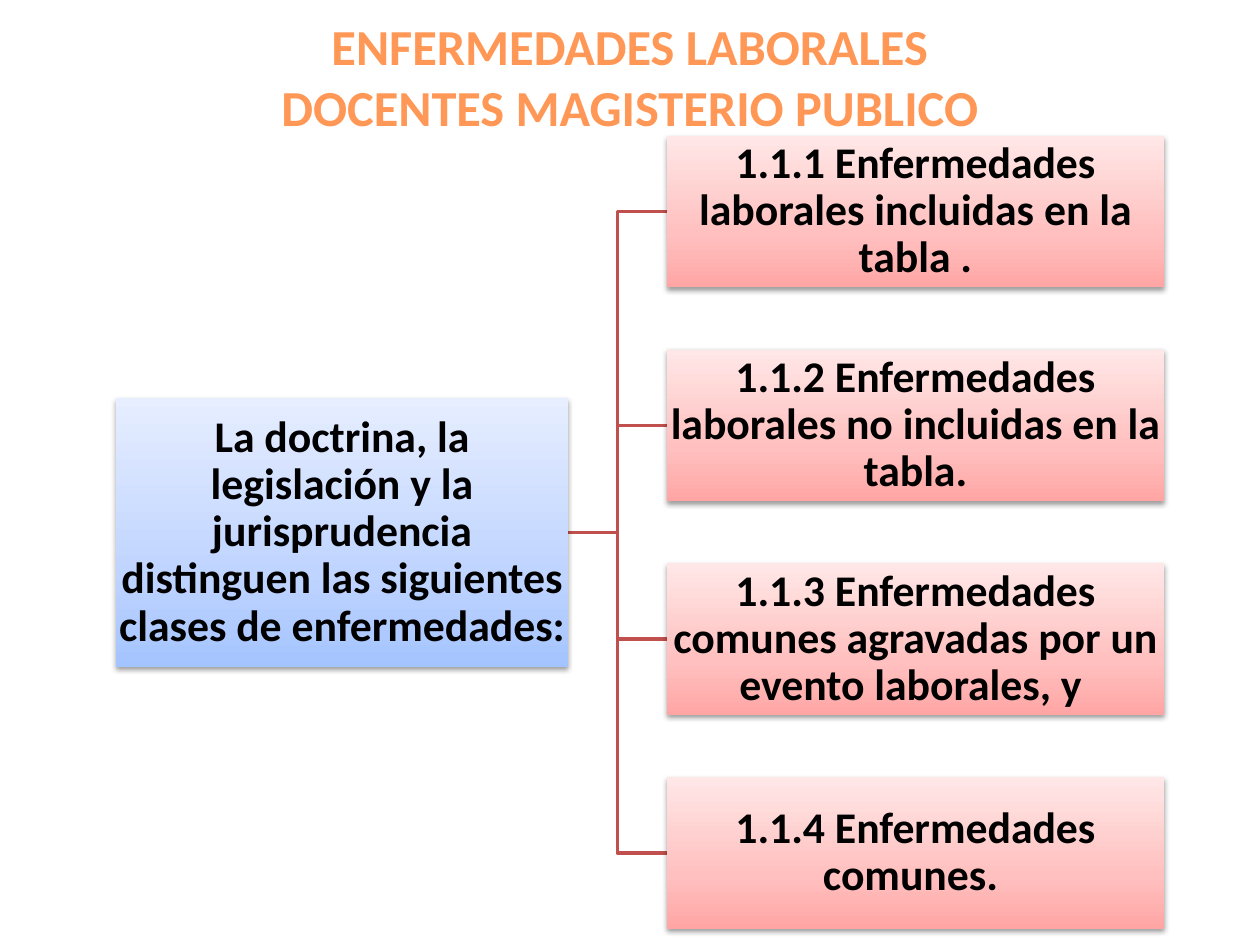
from dataclasses import dataclass

from lxml import etree
from pptx import Presentation
from pptx.dml.color import RGBColor
from pptx.enum.shapes import MSO_SHAPE
from pptx.enum.text import MSO_ANCHOR, PP_ALIGN
from pptx.oxml.ns import qn
from pptx.util import Cm, Pt

RECTANGLE = MSO_SHAPE.RECTANGLE
CENTER = PP_ALIGN.CENTER
MIDDLE = MSO_ANCHOR.MIDDLE
TITLE_ONLY = 5


@dataclass(frozen=True)
class Theme:
    font: str = "Calibri"
    title_size: float = 28.8
    body_size: float = 25
    line_width: float = 2
    title: str = "FF9856"
    text: str = "000000"
    line: str = "C0504D"
    blue: tuple[str, ...] = ("A4C4FF", "BFD4FF", "E6EEFF")
    red: tuple[str, ...] = ("FFA6A5", "FFC0BF", "FFE7E7")
    stops: tuple[int, ...] = (0, 35, 100)


@dataclass(frozen=True)
class Box:
    text: str
    left: float
    top: float
    width: float
    height: float
    colors: tuple[str, ...]

    @property
    def right(self) -> float:
        return self.left + self.width

    @property
    def middle(self) -> float:
        return self.top + self.height / 2


THEME = Theme()
TITLE = "ENFERMEDADES LABORALES\vDOCENTES MAGISTERIO PUBLICO"
ROOT = Box(
    "La doctrina, la legislación y la jurisprudencia distinguen "
    "las siguientes clases de enfermedades: ",
    2.34, 8.03, 9.11, 5.41, THEME.blue,
)
CLASSES = (
    "1.1.1 Enfermedades laborales incluidas en la tabla .",
    "1.1.2 Enfermedades laborales no incluidas en la tabla.",
    "1.1.3 Enfermedades comunes agravadas por un evento laborales, y ",
    "1.1.4 Enfermedades comunes. ",
)
BRANCH_TOP, BRANCH_PITCH = 2.74, 4.31
BRANCHES = [
    Box(text, 13.44, BRANCH_TOP + i * BRANCH_PITCH, 10.03, 3.05, THEME.red)
    for i, text in enumerate(CLASSES)
]


def set_attrs(target, values: dict) -> None:
    for name, value in values.items():
        setattr(target, name, value)


def write_text(sp, text: str, size: float, color: str, inset: float, spacing: float) -> None:
    tf = sp.text_frame
    tf.text = text
    margins = ("margin_left", "margin_top", "margin_right", "margin_bottom")
    set_attrs(tf, {"word_wrap": True, "vertical_anchor": MIDDLE,
                   **dict.fromkeys(margins, Cm(inset))})
    p = tf.paragraphs[0]
    set_attrs(p, {"alignment": CENTER, "line_spacing": spacing})
    for r in p.runs:
        set_attrs(r.font, {"name": THEME.font, "size": Pt(size), "bold": True})
        r.font.color.rgb = RGBColor.from_string(color)


def add_gradient(sp, colors: tuple[str, ...]) -> None:
    sp.fill.gradient()
    sp.fill.gradient_angle = 90
    stops = next(sp._element.spPr.iter(qn("a:gsLst")))
    for stop in list(stops):
        stops.remove(stop)
    for position, color in zip(THEME.stops, colors):
        stop = etree.SubElement(stops, qn("a:gs"), pos=str(position * 1000))
        etree.SubElement(stop, qn("a:srgbClr"), val=color)


def add_shadow(sp) -> None:
    sp.shadow.inherit = False
    effects = sp._element.spPr.find(qn("a:effectLst"))
    shadow = etree.SubElement(
        effects, qn("a:outerShdw"), blurRad=str(Pt(3.1)), dist=str(Pt(1.6)),
        dir="5400000", rotWithShape="0",
    )
    color = etree.SubElement(shadow, qn("a:srgbClr"), val="000000")
    etree.SubElement(color, qn("a:alpha"), val="38000")


def add_box(s, box: Box) -> None:
    sp = s.shapes.add_shape(
        RECTANGLE, Cm(box.left), Cm(box.top), Cm(box.width), Cm(box.height)
    )
    add_gradient(sp, box.colors)
    sp.line.fill.background()
    add_shadow(sp)
    write_text(sp, box.text, THEME.body_size, THEME.text, 0.04, 0.9)


def add_elbow(s, start: Box, end: Box) -> None:
    bend = (start.right + end.left) / 2
    points = [(bend, start.middle), (bend, end.middle), (end.left, end.middle)]
    builder = s.shapes.build_freeform(Cm(start.right), Cm(start.middle))
    builder.add_line_segments([(Cm(x), Cm(y)) for x, y in points], close=False)
    sp = builder.convert_to_shape()
    sp.fill.background()
    sp.line.color.rgb = RGBColor.from_string(THEME.line)
    sp.line.width = Pt(THEME.line_width)
    sp.shadow.inherit = False


def main() -> None:
    prs = Presentation()
    set_attrs(prs, {"slide_width": Cm(25.4), "slide_height": Cm(19.05)})
    s = prs.slides.add_slide(prs.slide_layouts[TITLE_ONLY])
    title = s.shapes.title
    set_attrs(title, {"left": Cm(0.5), "top": Cm(0.13),
                      "width": Cm(24.4), "height": Cm(2.8)})
    write_text(title, TITLE, THEME.title_size, THEME.title, 0.13, 1.0)
    for branch in reversed(BRANCHES):
        add_elbow(s, ROOT, branch)
    for box in (ROOT, *BRANCHES):
        add_box(s, box)
    prs.save("out.pptx")


if __name__ == "__main__":
    main()
